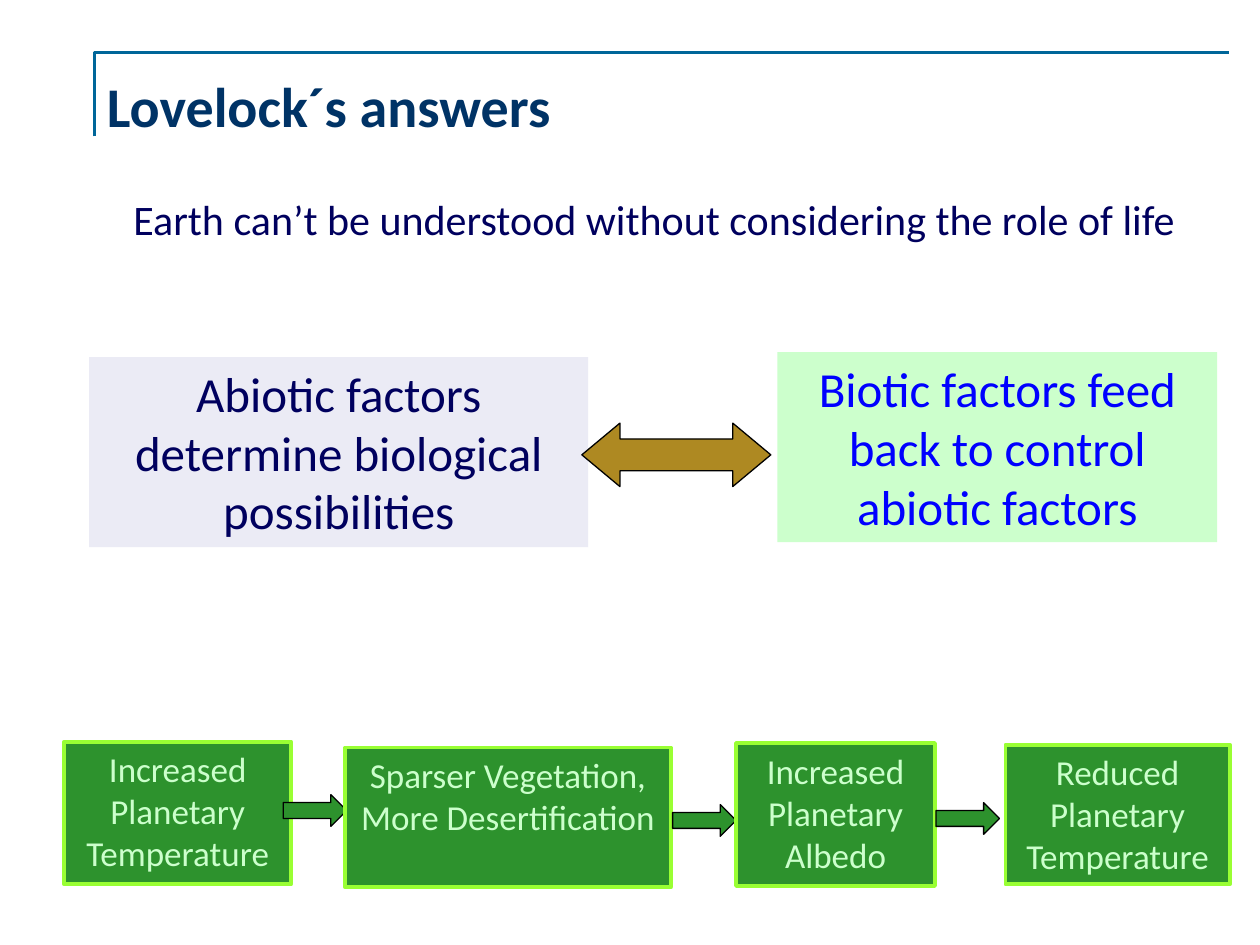
from pptx import Presentation
from pptx.dml.color import RGBColor as Rgb
from pptx.enum.shapes import MSO_SHAPE as Kind
from pptx.enum.text import MSO_ANCHOR as Anchor, PP_ALIGN as Align
from pptx.util import Cm, Pt

FONT = "Calibri"
COLORS = {
    "frame": "006699", "title": "003366", "navy": "00005E", "blue": "0000FF",
    "lilac": "EBEBF5", "mint": "CCFFCC", "gold": "AE8922",
    "green": "2D922D", "lime": "99FF33", "black": "000000",
}


def color(name):
    return Rgb.from_string(COLORS[name])


def write(frame, lines, size, ink, align=Align.LEFT, anchor=Anchor.TOP, bold=False):
    frame.word_wrap = True
    frame.vertical_anchor = anchor
    frame.text = "\n".join(lines)
    for para in frame.paragraphs:
        para.alignment = align
        para.font.name = FONT
        para.font.size = Pt(size)
        para.font.bold = bold
        para.font.color.rgb = color(ink)


def add_block(slide, kind, area, fill, edge=None, width=0.75):
    block = slide.shapes.add_shape(kind, *map(Cm, area))
    block.shadow.inherit = False
    block.fill.solid()
    block.fill.fore_color.rgb = color(fill)
    if edge:
        block.line.color.rgb = color(edge)
        block.line.width = Pt(width)
    else:
        block.line.fill.background()
    return block


def add_box(slide, area, lines, size, ink, fill, edge=None):
    box = add_block(slide, Kind.RECTANGLE, area, fill, edge, 2.25)
    write(box.text_frame, lines, size, ink, Align.CENTER)


def add_arrow(slide, kind, area, fill, head):
    arrow = add_block(slide, kind, area, fill, "black")
    arrow.adjustments[0] = 0.5
    arrow.adjustments[1] = head


def add_frame(slide):
    pen = slide.shapes.build_freeform(Cm(1.9), Cm(2.75))
    pen.add_line_segments([(Cm(1.9), Cm(1.06)), (Cm(24.77), Cm(1.06))], close=False)
    frame = pen.convert_to_shape()
    frame.shadow.inherit = False
    frame.fill.background()
    frame.line.color.rgb = color("frame")
    frame.line.width = Pt(1.5)


def add_title(slide, text):
    title = slide.shapes.title
    title.left, title.top, title.width, title.height = map(Cm, (1.9, 1.06, 22.66, 2.12))
    write(title.text_frame, [text], 32, "title", anchor=Anchor.MIDDLE, bold=True)


def add_note(slide, area, text):
    note = slide.shapes.add_textbox(*map(Cm, area))
    write(note.text_frame, [text], 24, "navy")


def add_chain(slide):
    # Each step: box area, lines, and place of the arrow that follows
    steps = [
        ((1.3, 14.95, 4.57, 2.88), ["Increased Planetary", "Temperature"], (5.71, 16.02)),
        ((6.96, 15.07, 6.56, 2.82), ["Sparser Vegetation,", "More Desertification"],
         (13.56, 16.22)),
        ((14.84, 14.98, 4.01, 2.88), ["Increased Planetary Albedo"], (18.87, 16.18)),
        ((20.27, 15.01, 4.52, 2.82), ["Reduced", "Planetary", "Temperature"], None),
    ]
    for area, lines, spot in steps:
        add_box(slide, area, lines, 20, "mint", "green", "lime")
        if spot:
            add_arrow(slide, Kind.RIGHT_ARROW, (*spot, 1.28, 0.64), "green", 0.5)


def main():
    deck = Presentation()
    deck.slide_width, deck.slide_height = Cm(25.4), Cm(19.05)
    slide = deck.slides.add_slide(deck.slide_layouts[5])

    # Heading
    add_frame(slide)
    add_title(slide, "Lovelock´s answers")
    add_note(slide, (2.44, 3.78, 21.8, 1.3),
             "Earth can’t be understood without considering the role of life")

    # Two-way link between factors
    add_box(slide, (1.8, 7.2, 10.06, 3.83),
            ["Abiotic factors", "determine biological possibilities"],
            28, "navy", "lilac")
    add_box(slide, (15.67, 7.1, 8.87, 3.83),
            ["Biotic factors feed back to control abiotic factors"],
            28, "blue", "mint")
    add_arrow(slide, Kind.LEFT_RIGHT_ARROW, (11.73, 8.53, 3.81, 1.28), "gold", 0.6)

    # Feedback chain
    add_chain(slide)
    deck.save("out.pptx")


if __name__ == "__main__":
    main()
